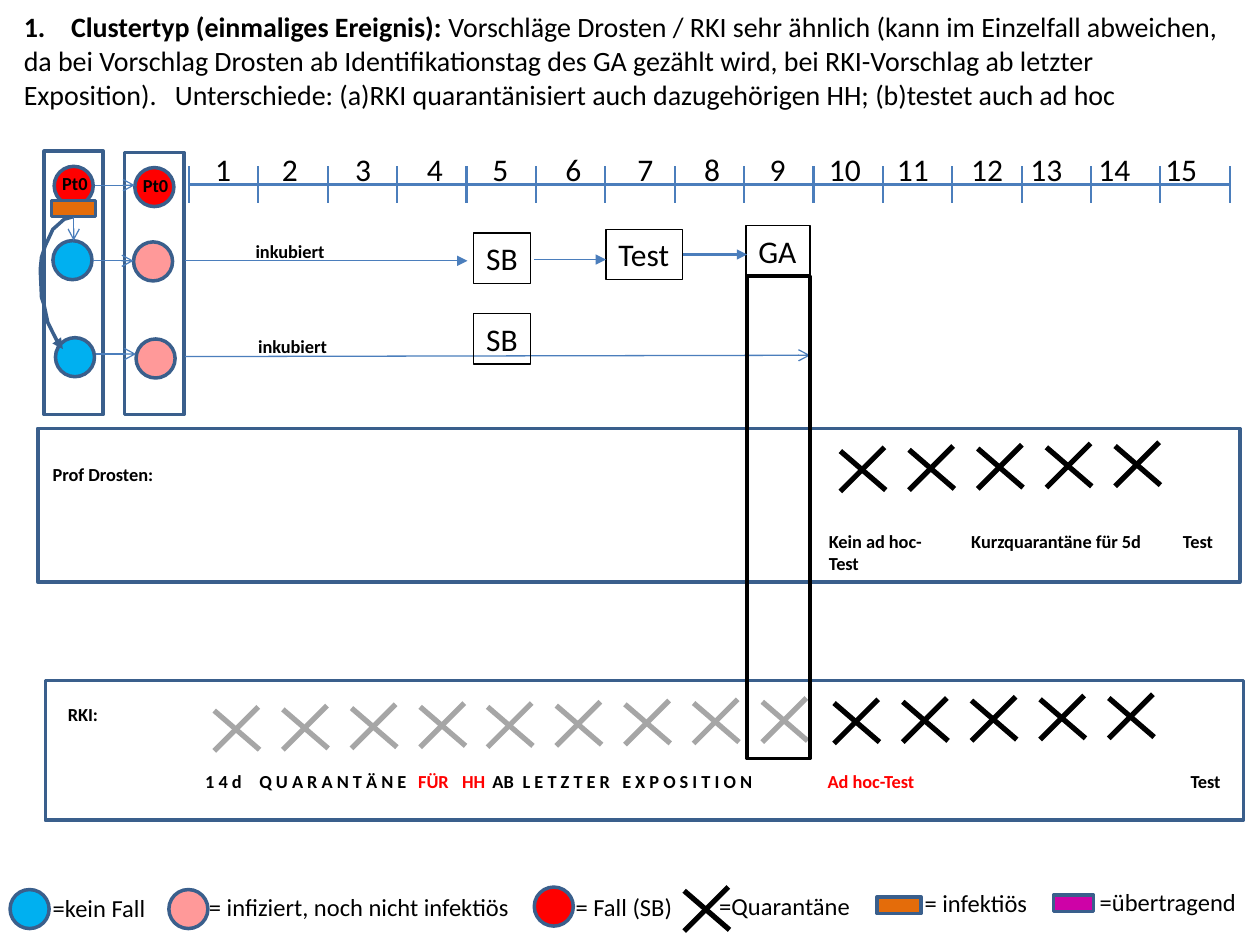
from lxml.etree import SubElement
from pptx import Presentation
from pptx.dml.color import RGBColor
from pptx.enum.shapes import MSO_CONNECTOR as CONN, MSO_SHAPE as SHAPE
from pptx.oxml.ns import qn
from pptx.util import Inches, Pt

# Grid of the slide: 100 columns by 75 rows, square cells
COLS, ROWS, CELL = 100, 75, 0.1
BLACK, GREY, RED, BLUE = "000000", "A6A6A6", "FF0000", "00B0F0"
PINK, ORANGE, MAGENTA = "FF9999", "E46C0A", "CE02A7"
EDGE, LINE = "3A5F8C", "4B7EBC"
DOT = 3.1

prs = Presentation()
prs.slide_width, prs.slide_height = Inches(COLS * CELL), Inches(ROWS * CELL)
shapes = prs.slides.add_slide(prs.slide_layouts[6]).shapes


def at(*cells):
    return [Inches(n * CELL) for n in cells]


def rgb(hex_color):
    return RGBColor.from_string(hex_color)


def set_line(sp, color, width, head=None):
    sp.line.color.rgb = rgb(color)
    sp.line.width = Pt(width)
    if head:
        SubElement(sp.line._get_or_add_ln(), qn("a:tailEnd"), type=head)


def shape(kind, x, y, w, h, fill=None, color=EDGE):
    sp = shapes.add_shape(kind, *at(x, y, w, h))
    sp.shadow.inherit = False
    if fill:
        sp.fill.solid()
        sp.fill.fore_color.rgb = rgb(fill)
    else:
        sp.fill.background()
    set_line(sp, color, 2)
    return sp


def dot(x, y, fill):
    return shape(SHAPE.OVAL, x, y, DOT, DOT, fill)


def line(x1, y1, x2, y2, color=LINE, width=0.75, head=None):
    cx = shapes.add_connector(CONN.STRAIGHT, *at(x1, y1, x2, y2))
    SubElement(cx._element.spPr, qn("a:effectLst"))
    set_line(cx, color, width, head)
    return cx


def style(p, size, bold=False, color=BLACK):
    for r in p.runs:
        r.font.name, r.font.size, r.font.bold = "Calibri", Pt(size), bold
        r.font.color.rgb = rgb(color)


def text(x, y, w, h, words, size, bold=False, wrap=False):
    sp = shapes.add_textbox(*at(x, y, w, h))
    tf = sp.text_frame
    tf.word_wrap = wrap
    tf.text = words
    for p in tf.paragraphs:
        style(p, size, bold)
    return sp


def set_tabs(p, start, columns):
    """Left tab stops at slide columns, for text starting at column start."""
    tabs = SubElement(p._p.get_or_add_pPr(), qn("a:tabLst"))
    for col in columns:
        SubElement(tabs, qn("a:tab"), pos=str(at(col - start)[0]), algn="l")


def cross(x, y, color=BLACK):
    line(x, y + 0.3, x + 3.6, y + 3.4, color, 3)
    line(x, y + 3.5, x + 3.5, y, color, 3)


def crosses(x, y, count, color=BLACK):
    for i in range(count):
        cross(x + 5.45 * i, y - 0.1 * i, color)


def heading(x, y, w, h):
    tf = text(x, y, w, h, "Clustertyp (einmaliges Ereignis): \n"
              "da bei Vorschlag Drosten ab Identifikationstag des GA gezählt wird, "
              "bei RKI-Vorschlag ab letzter\n"
              "Exposition).\tUnterschiede: (a)RKI quarantänisiert auch "
              "dazugehörigen HH; (b)testet auch ad hoc", 16).text_frame
    first, _, last = tf.paragraphs
    first.runs[0].font.bold = True
    r = first.add_run()
    r.text = "Vorschläge Drosten / RKI sehr ähnlich (kann im Einzelfall abweichen,"
    style(first, 16)
    first.runs[0].font.bold = True
    pPr = first._p.get_or_add_pPr()
    indent = at(3.75)[0]
    pPr.set("marL", str(indent))
    pPr.set("indent", str(-indent))
    SubElement(pPr, qn("a:buFont"), typeface="+mj-lt")
    SubElement(pPr, qn("a:buAutoNum"), type="arabicPeriod")
    set_tabs(last, x + 1, [13.9])


def timeline(x, y, w, h, days=15):
    step = w / days
    for i in range(days + 1):
        line(x + i * step, y, x + i * step, y + h, width=1.25)
    for i in range(days):
        line(x + i * step, y + h / 2, x + (i + 1) * step, y + h / 2, width=1.25)
    numbers = text(x + 1.1, y - 1.8, w, 4, "\t".join(map(str, range(1, days + 1))), 18, wrap=True)
    set_tabs(numbers.text_frame.paragraphs[0], x + 2.1,
             [22.4, 28.2, 33.9, 39.1, 44.9, 50.6, 55.9, 61.1,
              65.8, 71.2, 77.1, 81.8, 87.2, 92.5])


def group_of_people(x, y, w, h, fill):
    """Frame with the first case on top and two contacts below."""
    shape(SHAPE.RECTANGLE, x, y, w, h)
    for dx, dy, color in ((0.8, 1.2, RED), (0.7, 7.1, fill), (0.9, 14.8, fill)):
        dot(x + dx, y + dy, color)
    text(x + 0.45, y + 1.2, 4.1, 2.9, "Pt0", 10.5, True)


def transmission(x, y):
    """Infectious bar and the ways from the first case to the contacts."""
    bar = shape(SHAPE.RECTANGLE, x, y, 3.5, 1.3, ORANGE)
    line(x + 1.75, y + 1.3, x + 1.75, y + 3.2, head="arrow").begin_connect(bar, 2)
    curve = [(1.7, 1.3), (1, 1.5), (0.1, 2.3), (-0.5, 3.6), (-0.8, 4.5), (-0.9, 5.5),
             (-0.8, 7.7), (-0.6, 8.3), (-0.3, 9.7), (0.1, 10.5), (0.5, 11.3), (0.9, 11.8)]
    points = [at(x + dx, y + dy) for dx, dy in curve]
    builder = shapes.build_freeform(*points[0])
    builder.add_line_segments(points[1:], close=False)
    sp = builder.convert_to_shape()
    sp.shadow.inherit = False
    sp.fill.background()
    set_line(sp, EDGE, 2, "triangle")
    for dx, dy in ((3.4, -1.2), (3.3, 4.8), (3.5, 12.2)):
        line(x + dx, y + dy, x + dx + 3.2, y + dy, head="arrow")


def course(x, y, w):
    """Course of the disease in two contacts, one row each."""
    line(x, y, x + 22.4, y, head="triangle")
    line(x, y + 7.6, x + w, y + 7.5, head="arrow")
    text(x + 4.6, y - 2.1, 7.6, 2.8, "inkubiert", 10.5, True)
    text(x + 4.8, y + 5.4, 7.6, 2.8, "inkubiert", 10.5, True)
    stations = {}
    for words, dx, dy, width in (("SB", 22.9, -2.2, 4.5), ("Test", 33.4, -2.5, 6.1),
                                 ("GA", 44.5, -2.8, 5.1), ("SB", 22.9, 4.2, 4.5)):
        stations[words] = text(x + dx, y + dy, width, 4, words, 18)
        set_line(stations[words], BLACK, 0.75)
    line(x + 27.7, y - 0.1, x + 33.4, y - 0.1, head="triangle")
    to_ga = line(x + 39.5, y - 0.5, x + 44.6, y - 0.5, width=1.25, head="triangle")
    to_ga.begin_connect(stations["Test"], 3)


def drosten_panel(x, y, w, h):
    shape(SHAPE.RECTANGLE, x, y, w, h)
    tf = text(x + 0.2, y + 2.3, w, 9.8, "Prof Drosten:\n"
              "\tKein ad hoc-\tKurzquarantäne für 5d\tTest\n\tTest",
              10.5, True, True).text_frame
    tf.paragraphs[1].space_before = Pt(25.6)
    for p in tf.paragraphs[1:]:
        set_tabs(p, x + 1.2, [65.8, 77.1, 93.9])
    crosses(x + 63.7, y + 1.5, 5)


def rki_panel(x, y, w, h):
    shape(SHAPE.RECTANGLE, x, y, w, h)
    tf = text(x + 0.8, y + 1.3, w - 0.9, 9.8, "RKI:", 10.5, True, True).text_frame
    p = tf.add_paragraph()
    p.space_before = Pt(25.6)
    for words, color in (("\t1 4 d\tQ U A R A N T Ä N E", BLACK), ("\tFÜR\tHH", RED),
                         ("\tAB\tL E T Z T E R\tE X P O S I T I O N", BLACK),
                         ("\tAd hoc-Test", RED), ("\tTest", BLACK)):
        r = p.add_run()
        r.text = words
        r.font.name, r.font.size, r.font.bold = "Calibri", Pt(10.5), True
        r.font.color.rgb = rgb(color)
    set_tabs(p, x + 1.8, [16.3, 20.6, 33.2, 36.7, 39.1, 41.5, 49.4, 65.7, 94.5])
    crosses(x + 13.4, y + 2.1, 4, GREY)
    crosses(x + 35.1, y + 1.8, 5, GREY)
    crosses(x + 62.6, y + 1.5, 5)


def legend(x, y):
    for dx, dy, fill in ((0, 0.2, BLUE), (12.6, 0.2, PINK), (41.6, 0, RED)):
        dot(x + dx, y + dy, fill)
    cross(x + 53.5, y)
    shape(SHAPE.RECTANGLE, x + 68.8, y + 0.8, 3.5, 1.3, ORANGE)
    shape(SHAPE.RECTANGLE, x + 82.8, y + 0.65, 3.2, 1.3, MAGENTA)
    for dx, dy, w, words in ((2.4, 0, 9.4, "=kein Fall"),
                             (14.8, -0.1, 25.9, "= infiziert, noch nicht infektiös"),
                             (43.9, -0.1, 9.7, "= Fall (SB)"),
                             (55.3, -0.2, 12.5, "=Quarantäne"),
                             (71.6, -0.4, 10.3, "= infektiös"),
                             (85.5, -0.5, 13, "=übertragend")):
        text(x + dx, y + dy, w, 3.4, words, 14)


heading(0.9, 0.3, 101.2, 9.1)
timeline(15, 13.2, 82.6, 2.9)
group_of_people(3.5, 12, 4.7, 20.9, BLUE)
group_of_people(9.9, 12.1, 4.7, 20.8, PINK)
transmission(4.1, 15.9)
course(14.7, 20.7, 49.6)
drosten_panel(3, 34, 95.4, 12.2)
rki_panel(3.6, 54, 95.1, 11.1)
legend(0.8, 70.4)
# Day of identification, across both panels
shape(SHAPE.RECTANGLE, 59.3, 21.9, 5, 38.3, color=BLACK)
prs.save("out.pptx")
